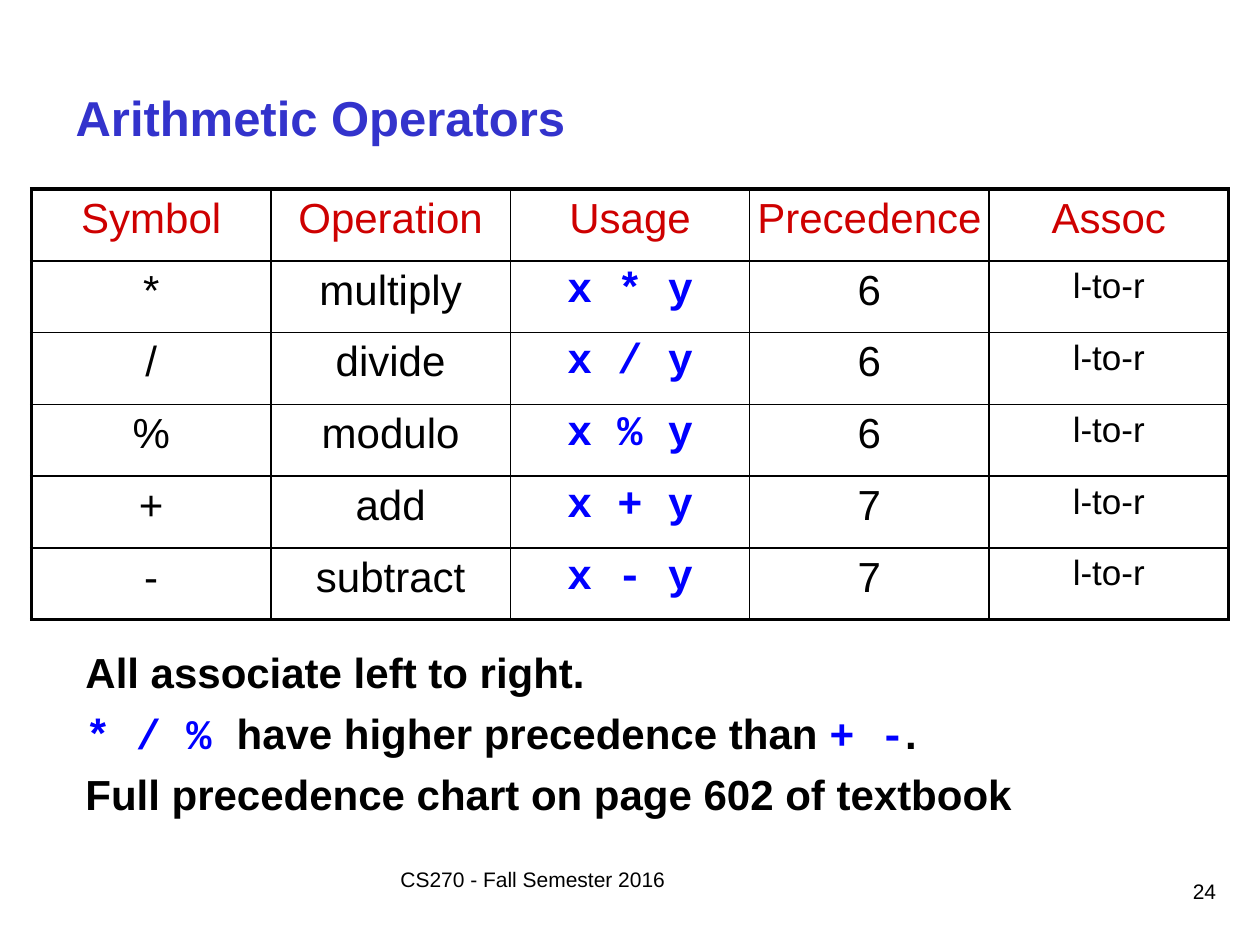
from lxml import etree
from pptx import Presentation
from pptx.dml.color import RGBColor
from pptx.enum.text import MSO_ANCHOR, PP_ALIGN
from pptx.oxml.ns import qn
from pptx.util import Inches, Pt

LEFT, MID, RIGHT = PP_ALIGN.LEFT, PP_ALIGN.CENTER, PP_ALIGN.RIGHT
TOP, CENTRE = MSO_ANCHOR.TOP, MSO_ANCHOR.MIDDLE

COLORS = {"title": "3333CC", "head": "CE0000", "code": "0000FF", "text": "000000"}


def style(color="text", size=24, bold=False, name="Arial"):
    return {"color": color, "size": Pt(size), "bold": bold, "name": name}


TITLE = style("title", 28, True)
HEAD = style("head")
CELL = style()
CODE = style("code", bold=True, name="Courier New")
ASSOC = style(size=20)
NOTE = style(bold=True)
SMALL = style(size=12)

HEADS = ["Symbol", "Operation", "Usage", "Precedence", "Assoc"]
OPS = [("*", "multiply", 6), ("/", "divide", 6), ("%", "modulo", 6),
       ("+", "add", 7), ("-", "subtract", 7)]
NOTES = [
    [("All associate left to right.", NOTE)],
    [("* / % ", CODE), ("have higher precedence than ", NOTE),
     ("+ -", CODE), (".", NOTE)],
    [("Full precedence chart on page 602 of textbook", NOTE)],
]


def write(para, runs, align=LEFT):
    para.alignment = align
    for text, form in runs:
        run = para.add_run()
        run.text = text
        for key, value in form.items():
            if key == "color":
                run.font.color.rgb = RGBColor.from_string(COLORS[value])
            else:
                setattr(run.font, key, value)


def add_title(slide, box):
    title = slide.shapes.title
    title.left, title.top, title.width, title.height = map(Inches, box)
    title.text_frame.vertical_anchor = CENTRE
    write(title.text_frame.paragraphs[0], [("Arithmetic Operators", TITLE)])


def add_text(slide, box, lines, align=LEFT, gap=0):
    frame = slide.shapes.add_textbox(*map(Inches, box)).text_frame
    frame.word_wrap = True
    frame.vertical_anchor = TOP
    for i, runs in enumerate(lines):
        para = frame.add_paragraph() if i else frame.paragraphs[0]
        para.space_before = Pt(gap)
        write(para, runs, align)


def add_edges(cell, outer):
    """Draw thick lines on the outer sides and thin ones elsewhere."""
    props = cell._tc.get_or_add_tcPr()
    for i, (side, thick) in enumerate(zip("LRTB", outer)):
        line = etree.Element(qn(f"a:ln{side}"), w=str(Pt(2.25 if thick else 1)))
        fill = etree.SubElement(line, qn("a:solidFill"))
        etree.SubElement(fill, qn("a:srgbClr"), val=COLORS["text"])
        props.insert(i, line)


def add_grid(slide, box):
    rows = [[(head, HEAD) for head in HEADS]]
    for sign, name, rank in OPS:
        rows.append([(sign, CELL), (name, CELL), (f"x {sign} y", CODE),
                     (str(rank), CELL), ("l-to-r", ASSOC)])
    last_row, last_col = len(rows) - 1, len(HEADS) - 1
    table = slide.shapes.add_table(len(rows), len(HEADS), *map(Inches, box)).table
    table.first_row = table.horz_banding = False
    for r, row in enumerate(rows):
        for c, item in enumerate(row):
            cell = table.cell(r, c)
            cell.fill.background()
            for side in ("left", "right", "top", "bottom"):
                setattr(cell, f"margin_{side}", Inches(0.05))
            add_edges(cell, (c == 0, c == last_col, r == 0, r == last_row))
            write(cell.text_frame.paragraphs[0], [item], MID)


def main():
    deck = Presentation()
    deck.slide_width, deck.slide_height = Inches(10), Inches(7.5)
    slide = deck.slides.add_slide(deck.slide_layouts[5])

    # Title and operator table
    add_title(slide, (0.5, 0.3, 9, 1.25))
    add_grid(slide, (0.25, 1.5, 9.5, 3.42))

    # Notes below the table
    add_text(slide, (0.58, 5.08, 8.5, 1.46), NOTES, gap=6)

    # Footer and page number
    add_text(slide, (3.08, 6.83, 3.83, 0.5), [[("CS270 - Fall Semester 2016", SMALL)]])
    add_text(slide, (7.17, 6.92, 2.58, 0.42), [[("24", SMALL)]], RIGHT)

    deck.save("out.pptx")


if __name__ == "__main__":
    main()
